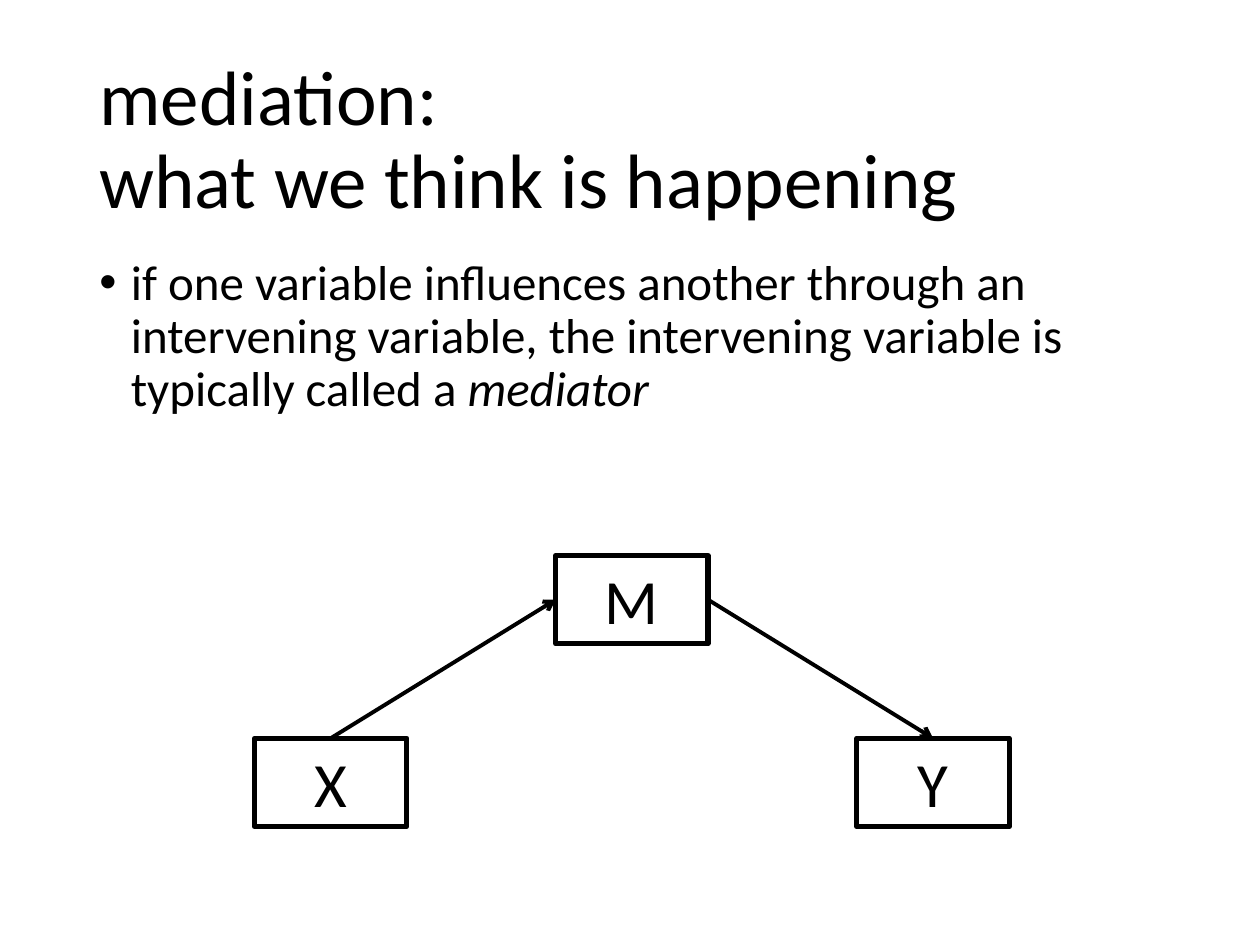
import pptx
import pptx.dml.color
import pptx.enum.shapes
import pptx.enum.text
import pptx.oxml.ns
import pptx.util
from lxml import etree

Pt = pptx.util.Pt
ANCHOR = pptx.enum.text.MSO_ANCHOR
ALIGN = pptx.enum.text.PP_ALIGN

BLACK = "000000"
FONT = "Calibri"
TITLE = ["mediation: ", "what we think is happening"]
DEFINITION = [
    ("if one variable influences another through an intervening variable, "
     "the intervening variable is typically called a ", False),
    ("mediator", True),
]
TEXT_LEFT, TEXT_WIDTH = 49.7, 620.6
BOX_WIDTH, BOX_HEIGHT = 87.1, 50.4
BOXES = {"X": (145.4, 421.9), "Y": (489.6, 421.9), "M": (317.5, 317.5)}
TOP, LEFT, RIGHT = 0, 1, 3  # connection sites of a rectangle
ARROWS = [("X", TOP, "M", LEFT), ("M", RIGHT, "Y", TOP)]


def color(value):
    return pptx.dml.color.RGBColor.from_string(value)


def add_run(paragraph, text, size, italic=False):
    run = paragraph.add_run()
    run.text = text
    formats = {"name": FONT, "size": Pt(size), "italic": italic}
    for name, value in formats.items():
        setattr(run.font, name, value)
    run.font.color.rgb = color(BLACK)


def add_text_box(slide, top, height, anchor):
    """Add a full-width text box and return its first paragraph."""
    shape = slide.shapes.add_textbox(
        Pt(TEXT_LEFT), Pt(top), Pt(TEXT_WIDTH), Pt(height))
    shape.text_frame.word_wrap = True
    shape.text_frame.vertical_anchor = anchor
    paragraph = shape.text_frame.paragraphs[0]
    paragraph.line_spacing = 0.9
    return paragraph


def add_bullet(paragraph, indent):
    properties = paragraph._p.get_or_add_pPr()
    properties.set("marL", str(Pt(indent)))
    properties.set("indent", str(-Pt(indent)))
    for tag, attribute, value in [("a:buFont", "typeface", "Arial"),
                                  ("a:buChar", "char", "•")]:
        element = etree.SubElement(properties, pptx.oxml.ns.qn(tag))
        element.set(attribute, value)


def add_box(slide, label, left, top):
    shape = slide.shapes.add_shape(
        pptx.enum.shapes.MSO_SHAPE.RECTANGLE,
        Pt(left), Pt(top), Pt(BOX_WIDTH), Pt(BOX_HEIGHT))
    shape.shadow.inherit = False
    shape.fill.background()
    shape.line.color.rgb = color(BLACK)
    shape.line.width = Pt(3)
    shape.text_frame.vertical_anchor = ANCHOR.MIDDLE
    paragraph = shape.text_frame.paragraphs[0]
    paragraph.alignment = ALIGN.CENTER
    add_run(paragraph, label, 36)
    return shape


def add_arrow(slide, start, start_site, end, end_site):
    connector = slide.shapes.add_connector(
        pptx.enum.shapes.MSO_CONNECTOR.STRAIGHT, 0, 0, 0, 0)
    connector.begin_connect(start, start_site)
    connector.end_connect(end, end_site)
    connector.line.color.rgb = color(BLACK)
    connector.line.width = Pt(2.25)
    qn = pptx.oxml.ns.qn
    head = etree.SubElement(connector.line._get_or_add_ln(), qn("a:tailEnd"))
    head.set("type", "arrow")
    etree.SubElement(connector._element.spPr, qn("a:effectLst"))


def main():
    presentation = pptx.Presentation()
    presentation.slide_width, presentation.slide_height = Pt(720), Pt(540)
    slide = presentation.slides.add_slide(presentation.slide_layouts[6])

    title = add_text_box(slide, 28.8, 104.4, ANCHOR.MIDDLE)
    for index, line in enumerate(TITLE):
        if index:
            title.add_line_break()
        add_run(title, line, 44)

    definition = add_text_box(slide, 144, 118, ANCHOR.TOP)
    definition.space_before = Pt(10)
    add_bullet(definition, 18)
    for text, italic in DEFINITION:
        add_run(definition, text, 28, italic)

    boxes = {label: add_box(slide, label, *place)
             for label, place in BOXES.items()}
    for start, start_site, end, end_site in ARROWS:
        add_arrow(slide, boxes[start], start_site, boxes[end], end_site)

    presentation.save("out.pptx")


if __name__ == "__main__":
    main()
